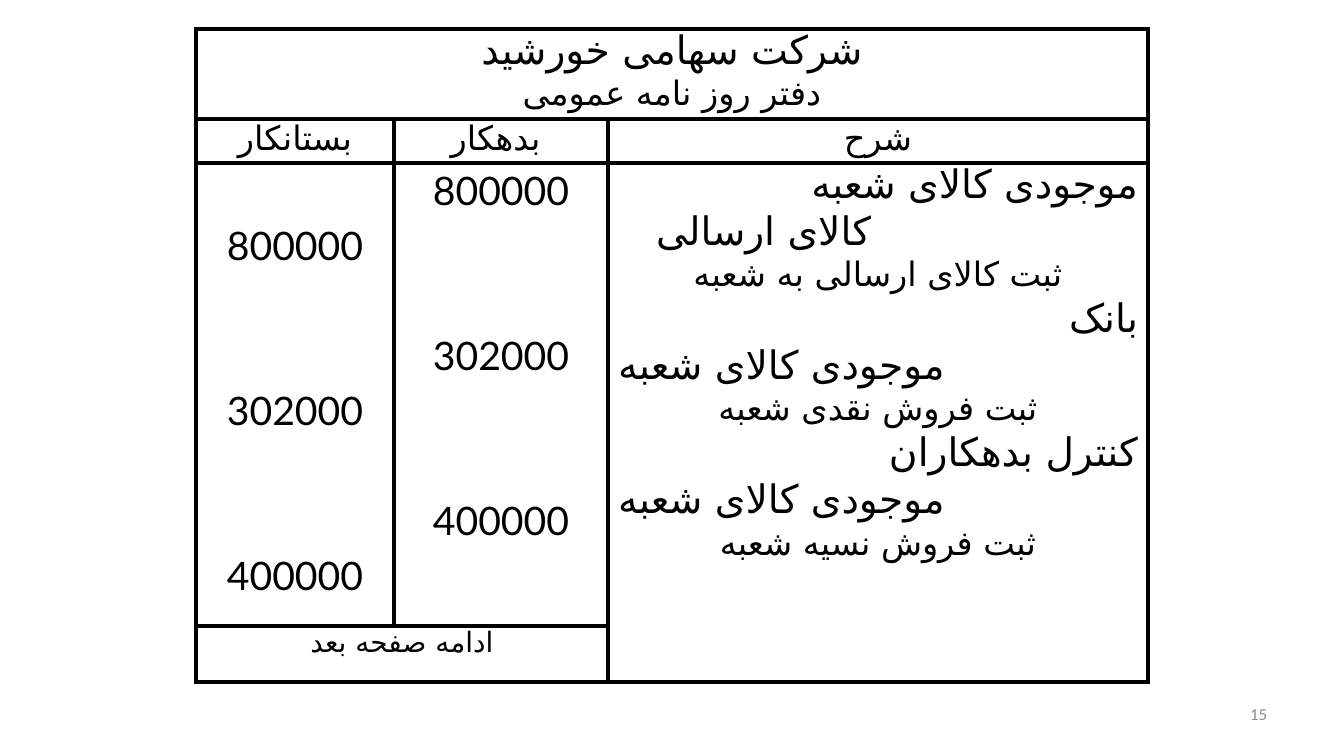
from dataclasses import dataclass

import lxml.etree
import pptx
import pptx.dml.color
import pptx.enum.text
import pptx.oxml.ns
import pptx.table
import pptx.util

PX = 914400 / 100.8
BLACK = pptx.dml.color.RGBColor(0, 0, 0)
GREY = pptx.dml.color.RGBColor(0x8C, 0x8C, 0x8C)
ALIGN = pptx.enum.text.PP_ALIGN
ANCHOR = pptx.enum.text.MSO_ANCHOR
LEFT, CENTER, RIGHT = ALIGN.LEFT, ALIGN.CENTER, ALIGN.RIGHT
TABLE_LEFT, TABLE_TOP = 196, 29
COLUMNS = (198, 214, 540)
ROWS = (89, 44, 463, 56)
PERSIAN_FONT = "DejaVu Sans"
PERSIAN_SPACING = 0.86
AMOUNT_GAP = 118  # leaves two ledger lines free between amounts
AMOUNTS = ("800000", "302000", "400000")


def px(n: int) -> int:
    return round(n * PX)


@dataclass(frozen=True)
class Line:
    text: str
    size: int
    align: ALIGN = CENTER
    indent: int = 0
    spacing: float = PERSIAN_SPACING
    gap: int | None = None


@dataclass(frozen=True)
class Entry:
    row: int
    col: int
    lines: list[Line]
    anchor: ANCHOR = ANCHOR.TOP
    margin_top: int = 4


def journal_lines(debit: str, credit: str, note: str, indent: int = 0) -> list[Line]:
    return [Line(debit, 28, RIGHT), Line(credit, 28, LEFT, indent), Line(note, 24)]


AMOUNT_LINES = [Line(a, 28, spacing=1.0, gap=AMOUNT_GAP if i else 0)
                for i, a in enumerate(AMOUNTS)]
HEADERS = ("بستانکار", "بدهکار ", "شرح")
ENTRIES = [
    Entry(0, 0, [Line("شرکت سهامی خورشید", 28), Line("دفتر روز نامه عمومی", 24)]),
    *[Entry(1, c, [Line(h, 24)], ANCHOR.MIDDLE) for c, h in enumerate(HEADERS)],
    Entry(2, 0, AMOUNT_LINES, margin_top=59),
    Entry(2, 1, AMOUNT_LINES),
    Entry(2, 2, [
        *journal_lines("موجودی کالای شعبه", "کالای ارسالی", "ثبت کالای ارسالی به شعبه", 38),
        *journal_lines("بانک", "موجودی کالای شعبه", "ثبت فروش نقدی شعبه"),
        *journal_lines("کنترل بدهکاران", "موجودی کالای شعبه", "ثبت فروش نسیه شعبه"),
    ]),
    Entry(3, 0, [Line("ادامه صفحه بعد", 20)]),
]


def style_cell(cell: pptx.table._Cell) -> None:
    """Clear the fill and rule all four sides in black."""
    cell.fill.background()
    tc_pr = cell._tc.get_or_add_tcPr()
    for i, side in enumerate(("lnL", "lnR", "lnT", "lnB")):
        ln = lxml.etree.Element(pptx.oxml.ns.qn(f"a:{side}"), w=str(pptx.util.Pt(3)))
        fill = lxml.etree.SubElement(ln, pptx.oxml.ns.qn("a:solidFill"))
        lxml.etree.SubElement(fill, pptx.oxml.ns.qn("a:srgbClr"), val=str(BLACK))
        tc_pr.insert(i, ln)


def fill_cell(cell: pptx.table._Cell, entry: Entry) -> None:
    cell.vertical_anchor = entry.anchor
    cell.margin_top = px(entry.margin_top)
    cell.margin_bottom = px(4)
    tf = cell.text_frame
    for i, line in enumerate(entry.lines):
        p = tf.add_paragraph() if i else tf.paragraphs[0]
        p.text = line.text
        p.alignment = line.align
        p.line_spacing = line.spacing
        p.space_before = pptx.util.Pt(line.size * 0.2) if line.gap is None else px(line.gap)
        if line.indent:
            p._p.get_or_add_pPr().set("marL", str(px(line.indent)))
        font = p.runs[0].font
        font.name = "Lato"
        font.size = pptx.util.Pt(line.size)
        font.color.rgb = BLACK
        r_pr = p.runs[0]._r.get_or_add_rPr()
        lxml.etree.SubElement(r_pr, pptx.oxml.ns.qn("a:cs"), typeface=PERSIAN_FONT)


def add_journal(slide: pptx.slide.Slide) -> None:
    table = slide.shapes.add_table(
        len(ROWS), len(COLUMNS), px(TABLE_LEFT), px(TABLE_TOP),
        px(sum(COLUMNS)), px(sum(ROWS))).table
    table.first_row = table.horz_banding = False
    for column, width in zip(table.columns, COLUMNS):
        column.width = px(width)
    for row, height in zip(table.rows, ROWS):
        row.height = px(height)
    for cell in table.iter_cells():
        style_cell(cell)
    for first, last in (((0, 0), (0, 2)), ((2, 2), (3, 2)), ((3, 0), (3, 1))):
        table.cell(*first).merge(table.cell(*last))
    for entry in ENTRIES:
        fill_cell(table.cell(entry.row, entry.col), entry)


def add_page_number(slide: pptx.slide.Slide) -> None:
    tf = slide.shapes.add_textbox(px(964), px(688), px(313), px(52)).text_frame
    tf.word_wrap = True
    tf.vertical_anchor = ANCHOR.MIDDLE
    p = tf.paragraphs[0]
    p.text = "15"
    p.alignment = RIGHT
    font = p.runs[0].font
    font.name = "Calibri"
    font.size = pptx.util.Pt(12)
    font.color.rgb = GREY


def main() -> None:
    prs = pptx.Presentation()
    prs.slide_width, prs.slide_height = px(1344), px(756)
    slide = prs.slides.add_slide(prs.slide_layouts[6])
    add_page_number(slide)
    add_journal(slide)
    prs.save("out.pptx")


if __name__ == "__main__":
    main()
